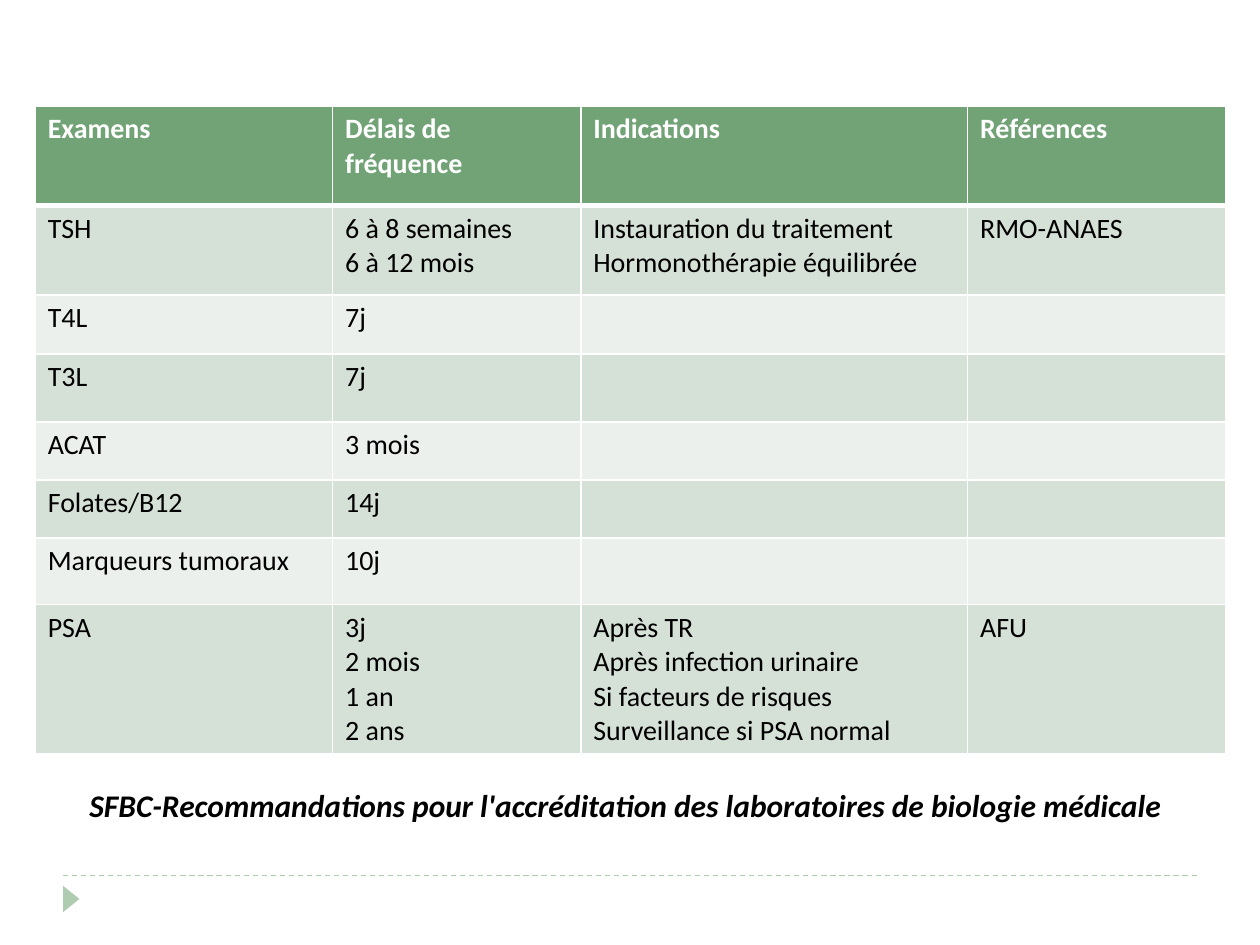
from dataclasses import dataclass

from lxml.etree import SubElement
from pptx import Presentation
from pptx.dml.color import RGBColor
from pptx.enum.dml import MSO_LINE
from pptx.enum.shapes import MSO_CONNECTOR, MSO_SHAPE
from pptx.enum.text import PP_ALIGN
from pptx.oxml.ns import qn
from pptx.util import Inches, Pt

WHITE = RGBColor(0xFF, 0xFF, 0xFF)
BLACK = RGBColor(0x00, 0x00, 0x00)
GREEN = RGBColor(0x72, 0xA3, 0x76)
BAND_DARK = RGBColor(0xD5, 0xE0, 0xD6)
BAND_LIGHT = RGBColor(0xEB, 0xF0, 0xEC)
FOOTER_GREEN = RGBColor(0xB0, 0xCC, 0xB0)

BASE = {"name": "Calibri", "size": Pt(16), "bold": False}
HEADER = BASE | {"bold": True}
CAPTION = BASE | {"size": Pt(18), "bold": True, "italic": True}


@dataclass(frozen=True)
class Row:
    height: float
    exam: str
    delays: str
    indications: str = ""
    references: str = ""

    def texts(self) -> tuple[str, ...]:
        return self.exam, self.delays, self.indications, self.references


COLUMN_WIDTHS = (2.36, 1.97, 3.07, 2.05)
ROWS = (
    Row(0.79, "Examens", "Délais de fréquence", "Indications", "Références"),
    Row(0.71, "TSH", "6 à 8 semaines\n6 à 12 mois",
        "Instauration du traitement\nHormonothérapie équilibrée", "RMO-ANAES"),
    Row(0.47, "T4L", "7j"),
    Row(0.54, "T3L", "7j"),
    Row(0.46, "ACAT", "3 mois"),
    Row(0.46, "Folates/B12", "14j"),
    Row(0.53, "Marqueurs tumoraux", "10j"),
    Row(1.18, "PSA", "3j\n2 mois\n1 an\n2 ans",
        "Après TR\nAprès infection urinaire\nSi facteurs de risques\n"
        "Surveillance si PSA normal", "AFU"),
)


def write(frame, text: str, color: RGBColor, style: dict, align=None) -> None:
    """Write one paragraph per line of text, all in the same style."""
    frame.text = text
    for para in frame.paragraphs:
        para.alignment = align
        for span in para.runs:
            for name, value in style.items():
                setattr(span.font, name, value)
            span.font.color.rgb = color


def add_borders(cell, bottom: float) -> None:
    """Give a cell white borders; call it before the fill is set."""
    properties = cell._tc.get_or_add_tcPr()
    for side, width in (("L", 1), ("R", 1), ("T", 1), ("B", bottom)):
        line = SubElement(properties, qn(f"a:ln{side}"), w=str(Pt(width)))
        fill = SubElement(line, qn("a:solidFill"))
        SubElement(fill, qn("a:srgbClr"), val=str(WHITE))


def add_exam_table(page) -> None:
    table = page.shapes.add_table(
        len(ROWS), len(COLUMN_WIDTHS), Inches(0.28), Inches(0.84),
        Inches(sum(COLUMN_WIDTHS)), Inches(sum(row.height for row in ROWS))).table
    for column, width in zip(table.columns, COLUMN_WIDTHS):
        column.width = Inches(width)
    for index, row in enumerate(ROWS):
        table.rows[index].height = Inches(row.height)
        header = index == 0
        band = GREEN if header else BAND_DARK if index % 2 else BAND_LIGHT
        for cell, text in zip(table.rows[index].cells, row.texts()):
            add_borders(cell, bottom=3 if header else 1)
            cell.fill.solid()
            cell.fill.fore_color.rgb = band
            if text:
                write(cell.text_frame, text, WHITE if header else BLACK,
                      HEADER if header else BASE)


def add_caption(page) -> None:
    box = page.shapes.add_textbox(Inches(0.28), Inches(6.19), Inches(9.37), Inches(0.4))
    box.text_frame.word_wrap = True
    write(box.text_frame,
          "SFBC-Recommandations pour l'accréditation des laboratoires de biologie médicale",
          BLACK, CAPTION, PP_ALIGN.CENTER)


def add_footer(page) -> None:
    rule = page.shapes.add_connector(
        MSO_CONNECTOR.STRAIGHT, Inches(0.5), Inches(6.95), Inches(9.5), Inches(6.95))
    rule.line.color.rgb = FOOTER_GREEN
    rule.line.width = Pt(0.75)
    rule.line.dash_style = MSO_LINE.DASH
    SubElement(rule._element.spPr, qn("a:effectLst"))

    marker = page.shapes.add_shape(
        MSO_SHAPE.ISOSCELES_TRIANGLE, Inches(0.46), Inches(7.07), Inches(0.21), Inches(0.13))
    marker.rotation = 90
    marker.shadow.inherit = False
    marker.fill.solid()
    marker.fill.fore_color.rgb = FOOTER_GREEN
    marker.line.fill.background()


def main() -> None:
    deck = Presentation()
    deck.slide_width, deck.slide_height = Inches(10), Inches(7.5)
    page = deck.slides.add_slide(deck.slide_layouts[6])
    add_footer(page)
    add_exam_table(page)
    add_caption(page)
    deck.save("out.pptx")


if __name__ == "__main__":
    main()
